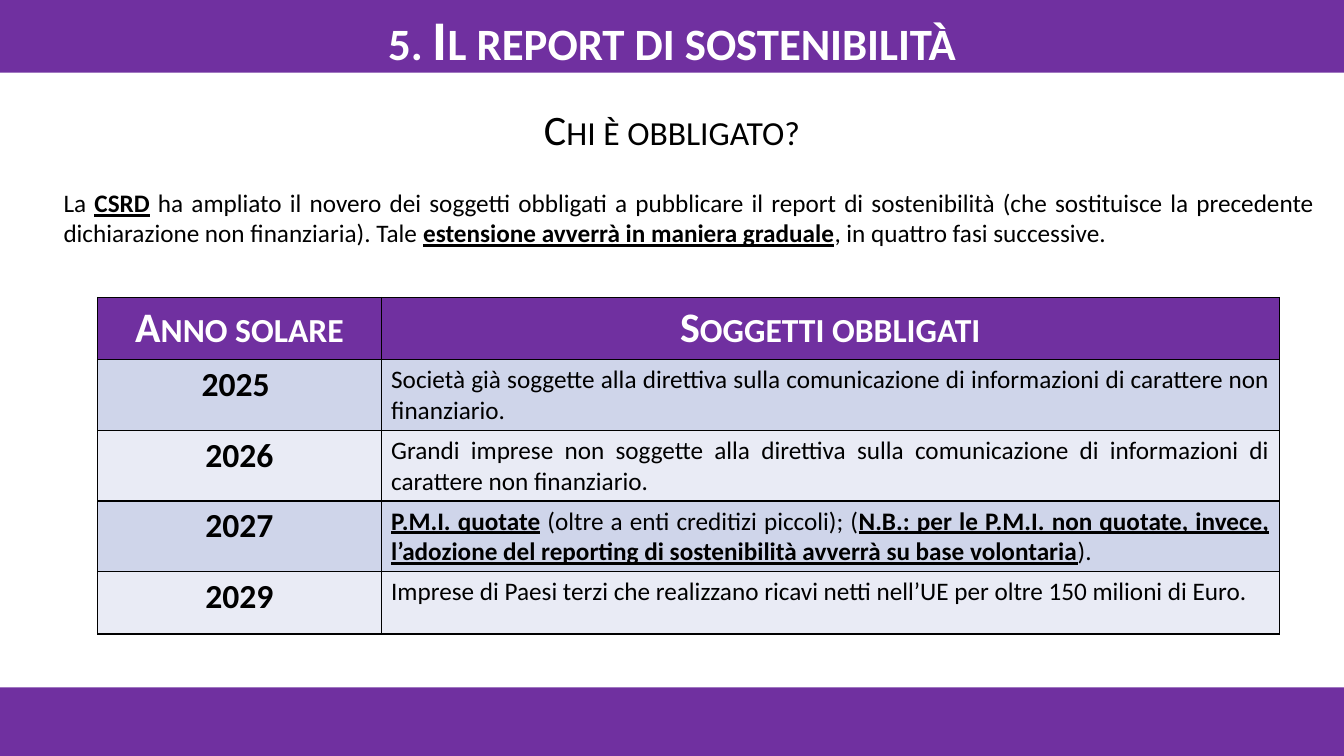
from lxml import etree
from pptx import Presentation
from pptx.dml.color import RGBColor
from pptx.enum.shapes import MSO_SHAPE as Shape
from pptx.enum.text import MSO_ANCHOR as Anchor, PP_ALIGN as Align
from pptx.oxml.ns import qn
from pptx.util import Inches, Pt

PURPLE = RGBColor(0x70, 0x30, 0xA0)
BLUE_BAND = RGBColor(0xCF, 0xD5, 0xEA)
PALE_BAND = RGBColor(0xE9, 0xEB, 0xF5)
WHITE = RGBColor(0xFF, 0xFF, 0xFF)
BLACK = RGBColor(0, 0, 0)
FONT = "Calibri"

# Content: a run is (text, emphasised)
TITLE = "5. Il report di sostenibilità"
QUESTION = "Chi è obbligato?"
INTRO = [
    ("La ", False),
    ("CSRD", True),
    (" ha ampliato il novero dei soggetti obbligati a pubblicare il report di "
     "sostenibilità (che sostituisce la precedente dichiarazione non finanziaria). Tale ", False),
    ("estensione avverrà in maniera graduale", True),
    (", in quattro fasi successive.", False),
]
HEADERS = ["Anno solare", "Soggetti obbligati"]
PHASES = [
    ("2025 ", [("Società già soggette alla direttiva sulla comunicazione di informazioni "
                "di carattere non finanziario.", False)]),
    ("2026", [("Grandi imprese non soggette alla direttiva sulla comunicazione di "
               "informazioni di carattere non finanziario.", False)]),
    ("2027", [("P.M.I. quotate", True),
              (" (oltre a enti creditizi piccoli); (", False),
              ("N.B.: per le P.M.I. non quotate, invece, l’adozione del reporting di "
               "sostenibilità avverrà su base volontaria", True),
              (").", False)]),
    ("2029", [("Imprese di Paesi terzi che realizzano ricavi netti nell’UE per oltre "
               "150 milioni di Euro.", False)]),
]
COLUMN_WIDTHS = [2.81, 8.91]
ROW_HEIGHT = 0.62

presentation = Presentation()
presentation.slide_width, presentation.slide_height = Inches(13.33), Inches(7.5)
slide = presentation.slides.add_slide(presentation.slide_layouts[6])


def add_run(paragraph, text, size, color=BLACK, bold=False, underline=False, small_caps=False):
    run = paragraph.add_run()
    run.text = text
    font = run.font
    font.name, font.size, font.bold, font.underline = FONT, Pt(size), bold, underline
    font.color.rgb = color
    if small_caps:
        run._r.get_or_add_rPr().set("cap", "small")


def add_rich_text(paragraph, runs):
    paragraph.alignment = Align.JUSTIFY
    for text, emphasised in runs:
        add_run(paragraph, text, 18, bold=emphasised, underline=emphasised)


def add_heading(paragraph, text, size, color=BLACK, bold=False):
    paragraph.alignment = Align.CENTER
    add_run(paragraph, text, size, color, bold, small_caps=True)


def add_band(top, height):
    band = slide.shapes.add_shape(Shape.RECTANGLE, 0, Inches(top),
                                  presentation.slide_width, Inches(height))
    band.shadow.inherit = False
    band.fill.solid()
    band.fill.fore_color.rgb = PURPLE
    band.line.fill.background()


def add_text_box(left, top, width, height, inset_x=0.07, inset_y=0.04):
    frame = slide.shapes.add_textbox(*map(Inches, (left, top, width, height))).text_frame
    frame.word_wrap = True
    frame.margin_left = frame.margin_right = Inches(inset_x)
    frame.margin_top = frame.margin_bottom = Inches(inset_y)
    return frame


def style_cell(cell, color):
    properties = cell._tc.get_or_add_tcPr()
    for side in ("a:lnL", "a:lnR", "a:lnT", "a:lnB"):
        line = etree.SubElement(properties, qn(side), w=str(Pt(1)))
        fill = etree.SubElement(line, qn("a:solidFill"))
        etree.SubElement(fill, qn("a:srgbClr"), val=str(BLACK))
    cell.fill.solid()
    cell.fill.fore_color.rgb = color


# Bands and texts
add_band(6.82, 0.68)
add_band(0, 0.72)
title = add_text_box(0, 0.08, 13.33, 0.59)
title.vertical_anchor = Anchor.MIDDLE
add_heading(title.paragraphs[0], TITLE, 40, WHITE, True)
add_rich_text(add_text_box(0.56, 1.82, 12.55, 0.8).paragraphs[0], INTRO)
question = add_text_box(1.31, 0.98, 10.71, 0.61, 0.1, 0.05)
add_heading(question.paragraphs[0], QUESTION, 30)

# Table of phases
row_count = len(PHASES) + 1
table = slide.shapes.add_table(row_count, len(HEADERS), Inches(0.97), Inches(2.95),
                               Inches(sum(COLUMN_WIDTHS)),
                               Inches(ROW_HEIGHT * row_count)).table
for column, width in zip(table.columns, COLUMN_WIDTHS):
    column.width = Inches(width)
for row in table.rows:
    row.height = Inches(ROW_HEIGHT)
for index, header in enumerate(HEADERS):
    cell = table.cell(0, index)
    style_cell(cell, PURPLE)
    add_heading(cell.text_frame.paragraphs[0], header, 30, WHITE, True)
for index, (year, subjects) in enumerate(PHASES, start=1):
    year_cell, subjects_cell = table.cell(index, 0), table.cell(index, 1)
    for cell in (year_cell, subjects_cell):
        style_cell(cell, BLUE_BAND if index % 2 else PALE_BAND)
    year_paragraph = year_cell.text_frame.paragraphs[0]
    year_paragraph.alignment = Align.CENTER
    add_run(year_paragraph, year, 24, bold=True)
    add_rich_text(subjects_cell.text_frame.paragraphs[0], subjects)

presentation.save("out.pptx")
